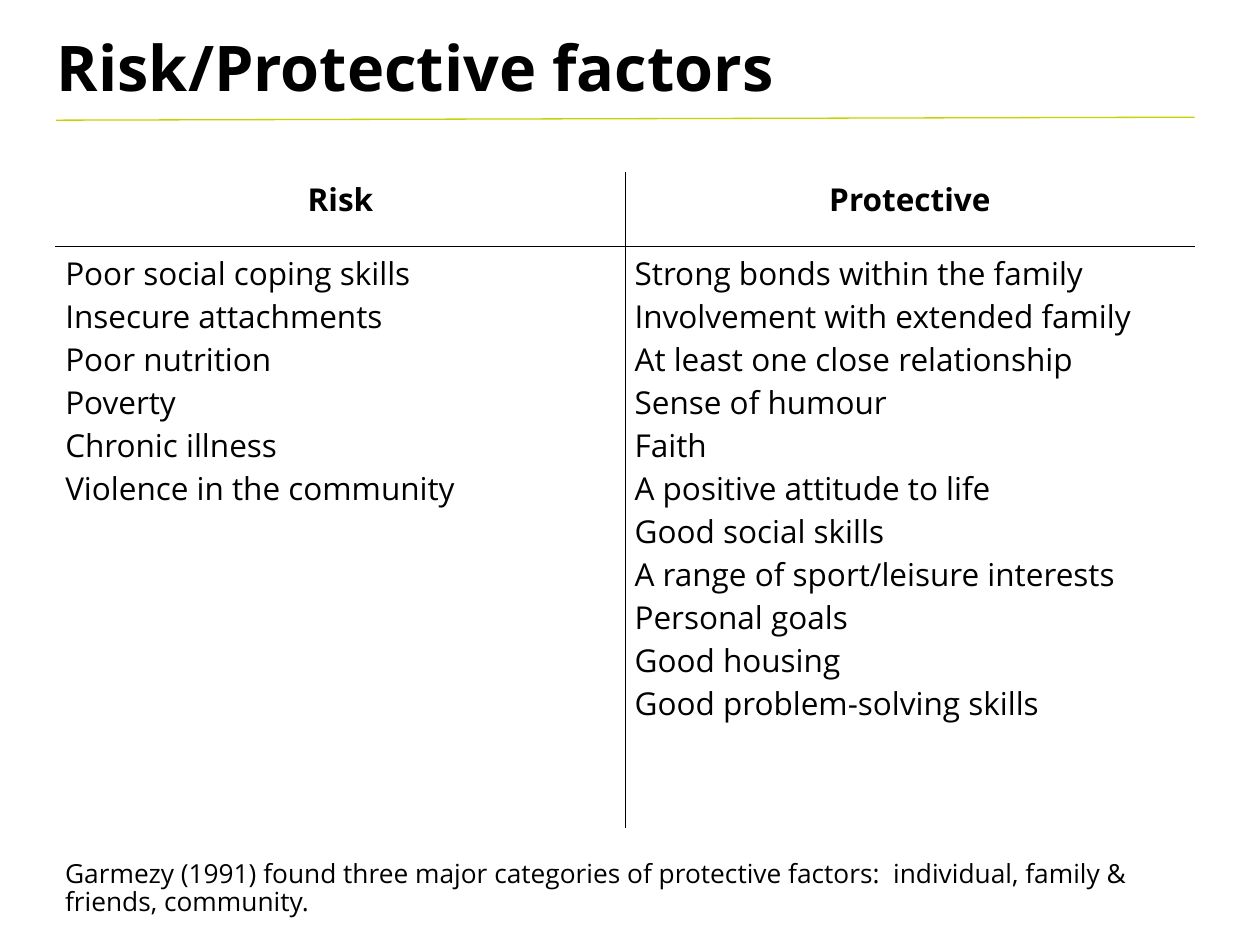
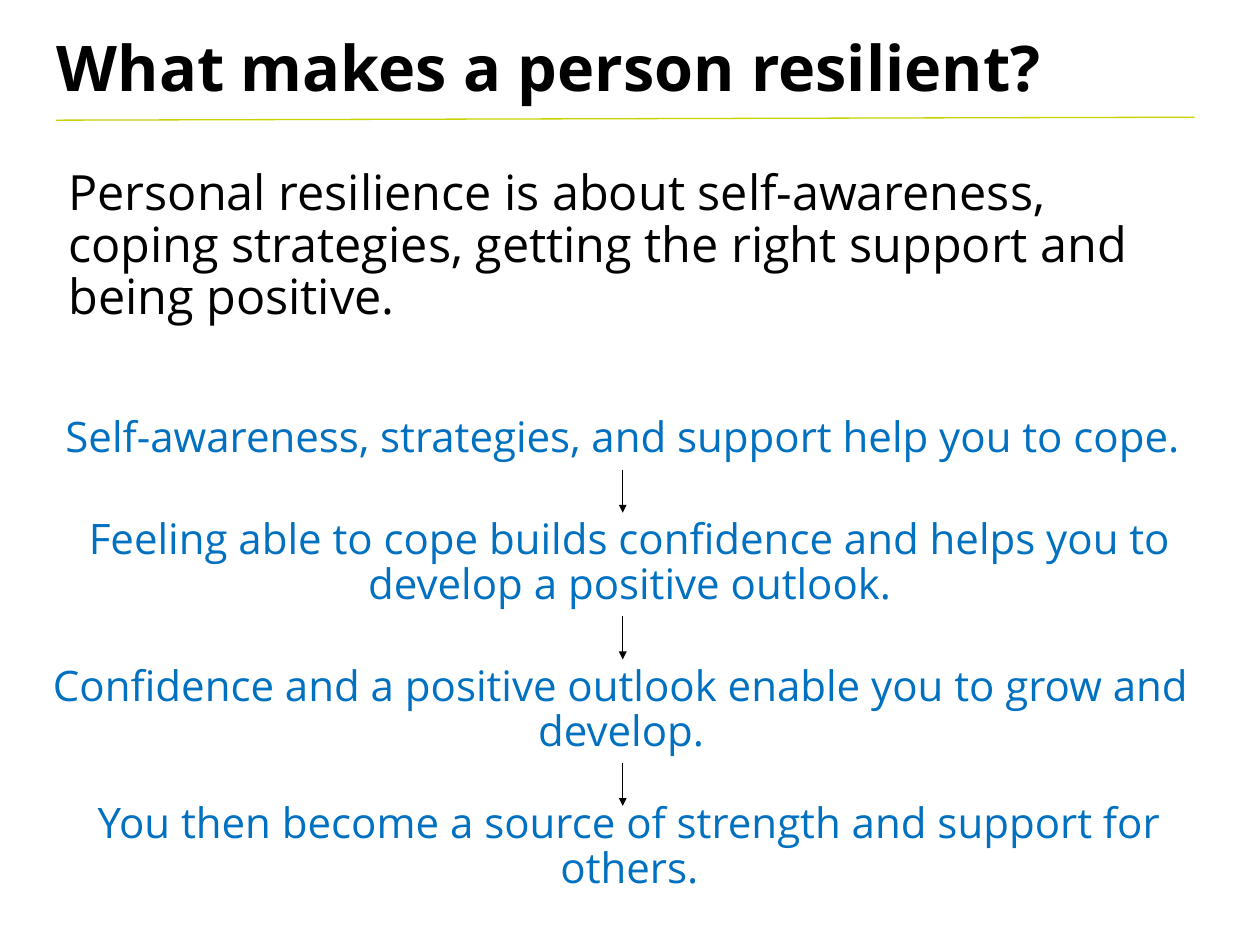
from dataclasses import dataclass

import pptx
import pptx.dml.color
import pptx.enum.shapes
import pptx.enum.text
import pptx.oxml
import pptx.oxml.ns
import pptx.util

Cm = pptx.util.Cm
Pt = pptx.util.Pt
ALIGN = pptx.enum.text.PP_ALIGN
ANCHOR = pptx.enum.text.MSO_ANCHOR
AUTO_SIZE = pptx.enum.text.MSO_AUTO_SIZE


@dataclass(frozen=True)
class Theme:
    font: str = "Open Sans"
    ink: str = "000000"
    paper: str = "FFFFFF"
    accent: str = "C6D301"
    step: str = "0070C0"
    title_size: int = 48
    intro_size: int = 37
    step_size: int = 32
    table_size: int = 24
    note_size: int = 20
    tight: float = 0.89
    wide_inset: tuple = (0.34, 0.17)
    narrow_inset: tuple = (0.25, 0.13)


@dataclass(frozen=True)
class Box:
    left: float
    top: float
    width: float
    height: float

    def inner(self, left, top, width, height):
        return Box(self.left + left, self.top + top, width, height)

    def lengths(self):
        return [Cm(value) for value in (self.left, self.top, self.width, self.height)]


THEME = Theme()
PAGE_BOX = Box(0, 0, 33.87, 25.4)
HEADER_BOX = Box(1.19, 0.66, 30.92, 2.57)
TABLE_BOX = Box(1.5, 4.65, 30.61, 17.63)
NOTE_BOX = Box(1.5, 23.01, 30.61, 1.96)
INTRO_BOX = Box(1.5, 4.37, 30.61, 5.13)
FLOW_BOX = Box(0.84, 11.02, 31.8, 13.46)

FACTORS = {
    "Risk": [
        "Poor social coping skills",
        "Insecure attachments",
        "Poor nutrition",
        "Poverty",
        "Chronic illness",
        "Violence in the community",
    ],
    "Protective": [
        "Strong bonds within the family",
        "Involvement with extended family",
        "At least one close relationship",
        "Sense of humour",
        "Faith",
        "A positive attitude to life",
        "Good social skills",
        "A range of sport/leisure interests",
        "Personal goals",
        "Good housing",
        "Good problem-solving skills",
    ],
}
NOTE = (
    "Garmezy (1991) found three major categories of protective factors:  "
    "individual, family & friends, community."
)
INTRO = (
    "Personal resilience is about self-awareness, coping strategies, "
    "getting the right support and being positive."
)
STEPS = [
    ("Self-awareness, strategies, and support help you to cope.", (0.46, 0, 30.91, 1.7)),
    ("Feeling able to cope builds confidence and helps you to develop a positive outlook.",
     (0.3, 2.75, 31.6, 3.07)),
    ("Confidence and a positive outlook enable you to grow and develop.",
     (0, 6.71, 31.72, 3.07)),
    ("You then become a source of strength and support for others.",
     (0.28, 10.39, 31.6, 3.07)),
]
ARROW_TOP, ARROW_PITCH, ARROW_LENGTH = 1.6, 3.94, 1.16


def colour(code):
    return pptx.dml.color.RGBColor.from_string(code)


def format_text(frame, size, code=THEME.ink, bold=False, align=ALIGN.LEFT, spacing=1.0):
    for para in frame.paragraphs:
        para.alignment = align
        para.line_spacing = spacing
        for span in para.runs:
            span.font.name = THEME.font
            span.font.size = Pt(size)
            span.font.bold = bold
            span.font.color.rgb = colour(code)


def add_text(page, box, text, inset=THEME.wide_inset, grow=True, anchor=ANCHOR.TOP, **style):
    frame = page.shapes.add_textbox(*box.lengths()).text_frame
    frame.word_wrap = True
    frame.auto_size = AUTO_SIZE.SHAPE_TO_FIT_TEXT if grow else AUTO_SIZE.NONE
    frame.vertical_anchor = anchor
    frame.margin_left = frame.margin_right = Cm(inset[0])
    frame.margin_top = frame.margin_bottom = Cm(inset[1])
    frame.text = text
    format_text(frame, **style)


def add_line(page, start, end, code, width, arrow=False):
    line = page.shapes.add_connector(
        pptx.enum.shapes.MSO_CONNECTOR.STRAIGHT, *[Cm(value) for value in (*start, *end)]
    )
    line.line.color.rgb = colour(code)
    line.line.width = Pt(width)
    if arrow:
        head = pptx.oxml.parse_xml(
            f'<a:tailEnd {pptx.oxml.ns.nsdecls("a")} type="triangle"/>'
        )
        line.line._get_or_add_ln().append(head)
    line._element.spPr.append(
        pptx.oxml.parse_xml(f'<a:effectLst {pptx.oxml.ns.nsdecls("a")}/>')
    )


def add_header(page, box, title):
    add_text(page, box.inner(0, 0, 27.89, 2.26), title, grow=False,
             anchor=ANCHOR.MIDDLE, size=THEME.title_size, bold=True)
    bottom, right = box.top + box.height, box.left + box.width
    add_line(page, (box.left + 0.31, bottom), (right, bottom - 0.08), THEME.accent, 1)


def set_borders(cell, row, column):
    dark_sides = {"R" if column == 0 else "L", "B" if row == 0 else "T"}
    properties = cell._tc.get_or_add_tcPr()
    for index, side in enumerate("LRTB"):
        code = THEME.ink if side in dark_sides else THEME.paper
        properties.insert(index, pptx.oxml.parse_xml(
            f'<a:ln{side} {pptx.oxml.ns.nsdecls("a")} w="{Pt(1)}">'
            f'<a:solidFill><a:srgbClr val="{code}"/></a:solidFill></a:ln{side}>'
        ))


def add_factor_table(page, box):
    table = page.shapes.add_table(2, len(FACTORS), *box.lengths()).table
    table.first_row = table.horz_banding = False
    heading_height = 1.98
    table.rows[0].height = Cm(heading_height)
    table.rows[1].height = Cm(box.height - heading_height)
    for column, (heading, factors) in enumerate(FACTORS.items()):
        table.columns[column].width = Cm(box.width / len(FACTORS))
        for row, text in enumerate((heading, "\n".join(factors))):
            cell = table.cell(row, column)
            cell.text_frame.text = text
            cell.fill.solid()
            cell.fill.fore_color.rgb = colour(THEME.paper)
            set_borders(cell, row, column)
            format_text(cell.text_frame, THEME.table_size, bold=row == 0,
                        align=ALIGN.CENTER if row == 0 else ALIGN.LEFT)


def add_step_flow(page, box):
    for text, place in STEPS:
        add_text(page, box.inner(*place), text, size=THEME.step_size, code=THEME.step,
                 align=ALIGN.CENTER, spacing=THEME.tight)
    middle = box.left + box.width / 2
    for index in range(len(STEPS) - 1):
        top = box.top + ARROW_TOP + index * ARROW_PITCH
        add_line(page, (middle, top), (middle, top + ARROW_LENGTH), THEME.ink, 0.5, arrow=True)


def add_page(deck, title):
    page = deck.slides.add_slide(deck.slide_layouts[6])
    add_header(page, HEADER_BOX, title)
    return page


def build_factors_page(deck):
    page = add_page(deck, "Risk/Protective factors")
    add_factor_table(page, TABLE_BOX)
    add_text(page, NOTE_BOX, NOTE, inset=THEME.narrow_inset,
             size=THEME.note_size, spacing=THEME.tight)


def build_resilience_page(deck):
    page = add_page(deck, "What makes a person resilient?")
    add_text(page, INTRO_BOX, INTRO, size=THEME.intro_size, spacing=THEME.tight)
    add_step_flow(page, FLOW_BOX)


def main():
    deck = pptx.Presentation()
    deck.slide_width = Cm(PAGE_BOX.width)
    deck.slide_height = Cm(PAGE_BOX.height)
    build_factors_page(deck)
    build_resilience_page(deck)
    deck.save("out.pptx")


if __name__ == "__main__":
    main()
